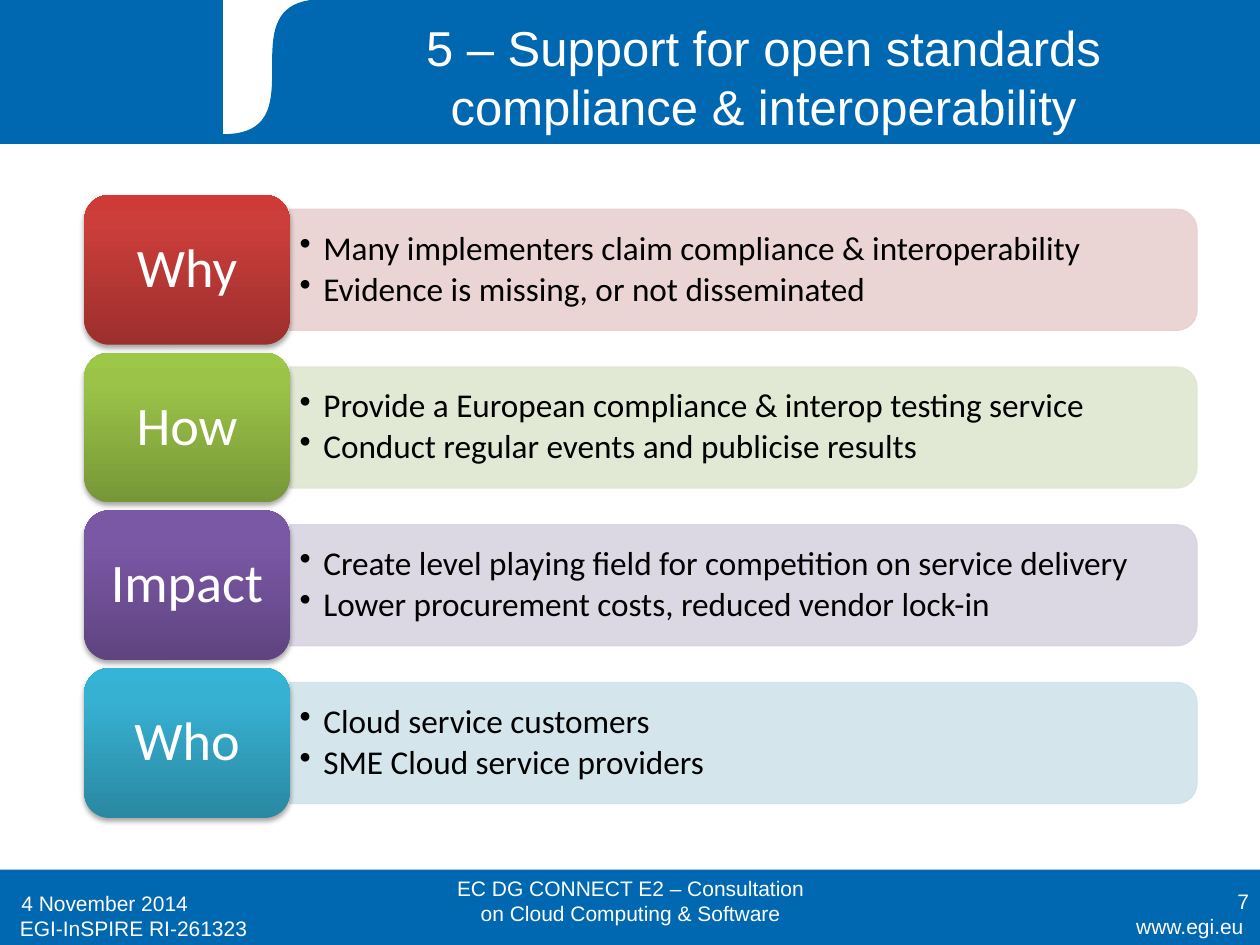
from copy import deepcopy

from lxml import etree
from pptx import Presentation
from pptx.dml.color import RGBColor
from pptx.enum.shapes import MSO_SHAPE
from pptx.enum.text import MSO_ANCHOR, PP_ALIGN
from pptx.oxml.ns import qn
from pptx.util import Cm, Pt

RECTANGLE = MSO_SHAPE.RECTANGLE
ROUNDED = MSO_SHAPE.ROUNDED_RECTANGLE
ROUND_TOP = MSO_SHAPE.ROUND_2_SAME_RECTANGLE
LEFT, CENTER, RIGHT = PP_ALIGN.LEFT, PP_ALIGN.CENTER, PP_ALIGN.RIGHT
TOP, MIDDLE = MSO_ANCHOR.TOP, MSO_ANCHOR.MIDDLE

PAGE_WIDTH, PAGE_HEIGHT = 25.4, 19.05
FIRST_ROW_CENTER, ROW_PITCH = 5.44, 3.18
BADGE_LEFT, BADGE_WIDTH, BADGE_HEIGHT = 1.7, 4.14, 3.02
BAND_LEFT, BAND_WIDTH, BAND_HEIGHT = 5.84, 18.29, 2.44

# Label, band colour, badge gradient from bottom to top, points
ROWS = [
    ("Why", "E8D0D0", ("9C2F2D", "CB3E3A", "CE3B37"),
     ["Many implementers claim compliance & interoperability",
      "Evidence is missing, or not disseminated"]),
    ("How", "DEE7D1", ("779737", "9BC348", "9DC746"),
     ["Provide a European compliance & interop testing service",
      "Conduct regular events and publicise results"]),
    ("Impact", "D8D3E0", ("5F4480", "7B58A6", "7C57A8"),
     ["Create level playing field for competition on service delivery",
      "Lower procurement costs, reduced vendor lock-in"]),
    ("Who", "D0E3EA", ("2A88A2", "37B1D2", "34B4D6"),
     ["Cloud service customers", "SME Cloud service providers"]),
]


def color(hex_string):
    return RGBColor.from_string(hex_string)


def add_element(parent, tag, **attributes):
    return etree.SubElement(parent, qn(tag), attributes)


class SlideBuilder:
    blue, white, black = "0067B1", "FFFFFF", "000000"
    frame_font, body_font = "Arial", "Calibri"

    def __init__(self, page):
        self.page = page

    def paint(self, shape, fill, line=None):
        shape.shadow.inherit = False
        shape.fill.solid()
        shape.fill.fore_color.rgb = color(fill)
        if line:
            shape.line.color.rgb = color(line)
            shape.line.width = Pt(0.75)
        else:
            shape.line.fill.background()

    def rectangle(self, left, top, width, height, fill, line=None):
        shape = self.page.shapes.add_shape(
            RECTANGLE, Cm(left), Cm(top), Cm(width), Cm(height))
        self.paint(shape, fill, line)

    def swoosh(self, left, right, bottom, curve_width):
        """Blue header piece whose left edge is an S-shaped curve."""
        steps = 40
        points = [(right, 0), (right, bottom)]
        for step in range(steps + 1):
            t = step / steps
            x = left + curve_width * (3 * t * (1 - t) ** 2 + t ** 3)
            y = bottom * ((1 - t) ** 3 + 3 * t * (1 - t) ** 2)
            points.append((x, y))
        points = [(Cm(x), Cm(y)) for x, y in points]
        builder = self.page.shapes.build_freeform(*points[0])
        builder.add_line_segments(points[1:], close=True)
        self.paint(builder.convert_to_shape(), self.blue, self.blue)

    def style_text(self, frame, size, font, text_color, align):
        for para in frame.paragraphs:
            para.alignment = align
            for span in para.runs:
                span.font.size = Pt(size)
                span.font.name = font
                span.font.color.rgb = color(text_color)

    def text_box(self, left, top, width, height, text, size,
                 align=LEFT, anchor=MIDDLE):
        box = self.page.shapes.add_textbox(
            Cm(left), Cm(top), Cm(width), Cm(height))
        frame = box.text_frame
        frame.word_wrap = True
        frame.vertical_anchor = anchor
        frame.text = text
        self.style_text(frame, size, self.frame_font, self.white, align)

    def band(self, center, fill):
        """Band rounded on the right: an upright shape turned by 90 degrees."""
        middle = BAND_LEFT + BAND_WIDTH / 2
        shape = self.page.shapes.add_shape(
            ROUND_TOP, Cm(middle - BAND_HEIGHT / 2), Cm(center - BAND_WIDTH / 2),
            Cm(BAND_HEIGHT), Cm(BAND_WIDTH))
        shape.rotation = 90
        self.paint(shape, fill, fill)
        for rgb in shape.element.spPr.iter(qn("a:srgbClr")):
            add_element(rgb, "a:alpha", val="90000")

    def bullets(self, center, points):
        height = 2.2
        box = self.page.shapes.add_textbox(
            Cm(BAND_LEFT), Cm(center - height / 2), Cm(18.19), Cm(height))
        frame = box.text_frame
        frame.word_wrap = True
        frame.vertical_anchor = MIDDLE
        frame.margin_left = frame.margin_right = Cm(0.2)
        frame.margin_top = frame.margin_bottom = Cm(0.1)
        frame.text = "\n".join(points)
        for para in frame.paragraphs:
            para.level = 1
            para.line_spacing = 0.9
            para.space_after = Pt(2.85)
            properties = para._p.get_or_add_pPr()
            properties.set("marL", str(Cm(0.48)))
            properties.set("indent", str(-Cm(0.48)))
            add_element(properties, "a:buChar", char="•")
        self.style_text(frame, 19, self.body_font, self.black, LEFT)

    def badge(self, center, label, gradient):
        shape = self.page.shapes.add_shape(
            ROUNDED, Cm(BADGE_LEFT), Cm(center - BADGE_HEIGHT / 2),
            Cm(BADGE_WIDTH), Cm(BADGE_HEIGHT))
        shape.line.fill.background()
        shape.fill.gradient()
        shape.fill.gradient_angle = 90
        stop_list = shape.element.spPr.find(".//" + qn("a:gsLst"))
        stop_list.append(deepcopy(stop_list[-1]))
        stops = shape.fill.gradient_stops
        for stop, position, shade in zip(stops, (0, 0.8, 1), gradient):
            stop.position = position
            stop.color.rgb = color(shade)
        self.drop_shadow(shape)

        frame = shape.text_frame
        frame.word_wrap = True
        frame.vertical_anchor = MIDDLE
        frame.margin_left = frame.margin_right = Cm(0.3)
        frame.margin_top = frame.margin_bottom = Cm(0.15)
        frame.text = label
        frame.paragraphs[0].line_spacing = 0.9
        self.style_text(frame, 31, self.body_font, self.white, CENTER)

    def drop_shadow(self, shape):
        shape.shadow.inherit = False
        effects = shape.element.spPr.find(qn("a:effectLst"))
        shadow = add_element(effects, "a:outerShdw", blurRad=str(Pt(3.1)),
                             dist=str(Pt(1.8)), dir="5400000", rotWithShape="0")
        rgb = add_element(shadow, "a:srgbClr", val=self.black)
        add_element(rgb, "a:alpha", val="35000")


def main():
    deck = Presentation()
    deck.slide_width, deck.slide_height = Cm(PAGE_WIDTH), Cm(PAGE_HEIGHT)
    slide = SlideBuilder(deck.slides.add_slide(deck.slide_layouts[6]))
    blue, white = slide.blue, slide.white

    slide.rectangle(0, 17.53, PAGE_WIDTH, 1.52, blue)
    slide.rectangle(0, 0, PAGE_WIDTH, 2.9, blue, blue)
    slide.rectangle(4.5, 0, 5, 2.72, white, white)
    slide.swoosh(left=4.5, right=9.5, bottom=2.72, curve_width=2)

    slide.text_box(21.31, 18.29, 4.01, 0.79, "www.egi.eu", 12, RIGHT, TOP)
    slide.text_box(0.15, 18.34, 6.35, 0.79, "EGI-InSPIRE RI-261323", 12, anchor=TOP)
    slide.text_box(5.89, 0.33, 19, 2.41,
                   "5 – Support for open standards compliance & interoperability",
                   28, CENTER)
    slide.text_box(0.18, 17.7, 5.92, 1.02, "4 November 2014", 12)
    slide.text_box(8.69, 17.65, 8.05, 1.02,
                   "EC DG CONNECT E2 – Consultation on Cloud Computing & Software",
                   12, CENTER)
    slide.text_box(19.51, 17.65, 5.92, 1.02, "7", 12, RIGHT)

    for index, (label, band_fill, gradient, points) in enumerate(ROWS):
        center = FIRST_ROW_CENTER + index * ROW_PITCH
        slide.band(center, band_fill)
        slide.bullets(center, points)
        slide.badge(center, label, gradient)

    deck.save("out.pptx")


if __name__ == "__main__":
    main()
